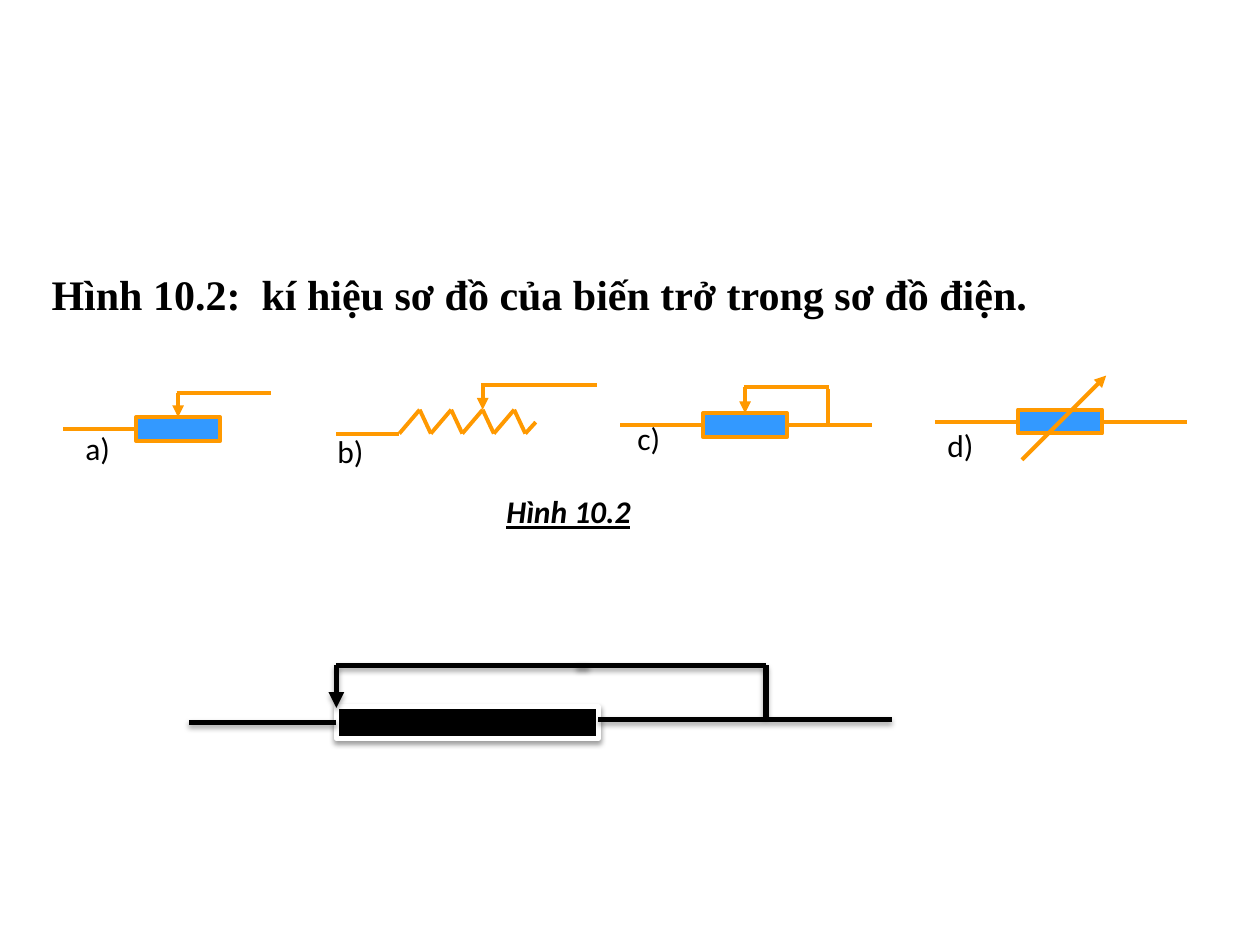
"""Build the slide showing circuit symbols of a variable resistor."""
import itertools

import lxml.etree
import pptx
import pptx.dml.color
import pptx.enum.shapes
import pptx.oxml.ns
import pptx.util

Cm = pptx.util.Cm
Pt = pptx.util.Pt
qn = pptx.oxml.ns.qn

ORANGE, BLUE, BLACK, WHITE = "FF9900", "3399FF", "000000", "FFFFFF"

TITLE = ("Hình 10.2:  kí hiệu sơ đồ của biến trở trong sơ đồ điện.", 0.79, 5.28, 23.67, 1.27)
CAPTION = ("Hình 10.2", 9.96, 9.8, 4.34, 1.02)
LABELS = [("a)", 1.47, 8.53), ("b)", 6.55, 8.59), ("c)", 12.6, 8.33), ("d)", 18.85, 8.46)]
LABEL_SIZE = (1.47, 1.02)

RESISTORS = [(2.74, 8.41), (14.17, 8.33), (20.52, 8.26)]
RESISTOR_SIZE = (1.7, 0.48)
LARGE_RESISTOR = (6.78, 14.25, 5.28, 0.64)

WIRES = [
    (1.27, 8.65, 2.74, 8.65), (3.56, 7.92, 5.46, 7.92),
    (6.78, 8.74, 8.05, 8.74), (9.7, 7.77, 12.04, 7.77),
    (12.5, 8.57, 14.17, 8.57), (15.87, 8.57, 17.58, 8.57),
    (15.0, 7.8, 16.71, 7.8), (16.69, 7.85, 16.69, 8.57),
    (18.85, 8.5, 20.52, 8.5), (22.22, 8.5, 23.93, 8.5),
]
ARROWS = [
    (3.59, 7.92, 3.59, 8.41), (9.73, 7.77, 9.73, 8.26),
    (15.02, 7.8, 15.02, 8.33), (20.6, 9.27, 22.3, 7.57),
]
LARGE_WIRES = [
    (3.81, 14.57, 6.78, 14.57), (12.06, 14.5, 17.98, 14.5),
    (6.78, 13.41, 11.86, 13.41), (15.44, 13.41, 15.44, 14.45),
    (11.63, 13.41, 15.44, 13.41),
]
LARGE_ARROW = (6.78, 13.41, 6.78, 14.27)

ZIGZAG_LEFT, ZIGZAG_TOP, ZIGZAG_BOTTOM = 8.05, 8.26, 8.74
ZIGZAG_STEP, ZIGZAG_RISE, ZIGZAG_TEETH = 0.635, 0.41, 4
ZIGZAG_END = (10.8, 8.51)


def color(value):
    return pptx.dml.color.RGBColor.from_string(value)


def set_effect(shape, opacity=0, distance=0):
    """Give the shape a soft drop shadow, or none when opacity is zero."""
    effects = lxml.etree.SubElement(shape._element.spPr, qn("a:effectLst"))
    if opacity:
        shadow = lxml.etree.SubElement(
            effects, qn("a:outerShdw"), blurRad=str(Pt(3.1)), dist=str(Pt(distance)),
            dir="5400000", rotWithShape="0")
        tint = lxml.etree.SubElement(shadow, qn("a:srgbClr"), val=BLACK)
        lxml.etree.SubElement(tint, qn("a:alpha"), val=str(opacity * 1000))


def add_text(slide, text, left, top, width, height, size=18, font="Calibri", **styles):
    box = slide.shapes.add_textbox(Cm(left), Cm(top), Cm(width), Cm(height))
    box.text_frame.word_wrap = True
    run = box.text_frame.paragraphs[0].add_run()
    run.text = text
    run.font.name, run.font.size = font, Pt(size)
    run.font.color.rgb = color(BLACK)
    for name, value in styles.items():
        setattr(run.font, name, value)


def add_resistor(slide, left, top, width, height, fill, outline, weight, **effect):
    shape = slide.shapes.add_shape(
        pptx.enum.shapes.MSO_SHAPE.RECTANGLE, Cm(left), Cm(top), Cm(width), Cm(height))
    shape.fill.solid()
    shape.fill.fore_color.rgb = color(fill)
    shape.line.color.rgb = color(outline)
    shape.line.width = Pt(weight)
    set_effect(shape, **effect)
    return shape


def join(connect, x, y, resistors):
    """Join a line end to the resistor side whose middle it touches."""
    for shape in resistors:
        middle_x, middle_y = shape.left + shape.width / 2, shape.top + shape.height / 2
        sides = [(middle_x, shape.top), (shape.left, middle_y),
                 (middle_x, shape.top + shape.height), (shape.left + shape.width, middle_y)]
        for site, (side_x, side_y) in enumerate(sides):
            if max(abs(side_x - Cm(x)), abs(side_y - Cm(y))) < Cm(0.02):
                connect(shape, site)


def add_line(slide, ends, resistors, stroke, weight, arrow=False, **effect):
    line = slide.shapes.add_connector(
        pptx.enum.shapes.MSO_CONNECTOR.STRAIGHT, *[Cm(value) for value in ends])
    join(line.begin_connect, *ends[:2], resistors)
    join(line.end_connect, *ends[2:], resistors)
    line.line.color.rgb = color(stroke)
    line.line.width = Pt(weight)
    if arrow:
        lxml.etree.SubElement(line.line._get_or_add_ln(), qn("a:tailEnd"), type="triangle")
    set_effect(line, **effect)


def zigzag():
    points = []
    for tooth in range(ZIGZAG_TEETH):
        left = ZIGZAG_LEFT + tooth * ZIGZAG_STEP
        points += [(left, ZIGZAG_BOTTOM), (left + ZIGZAG_RISE, ZIGZAG_TOP)]
    points += [(ZIGZAG_LEFT + ZIGZAG_TEETH * ZIGZAG_STEP, ZIGZAG_BOTTOM), ZIGZAG_END]
    return [start + end for start, end in itertools.pairwise(points)]


def main():
    presentation = pptx.Presentation()
    presentation.slide_width, presentation.slide_height = Cm(25.4), Cm(19.05)
    slide = presentation.slides.add_slide(presentation.slide_layouts[6])

    add_text(slide, *TITLE, size=24, font="Times New Roman", bold=True)
    resistors = [add_resistor(slide, *place, *RESISTOR_SIZE, BLUE, ORANGE, 2.25)
                 for place in RESISTORS]
    for ends in WIRES + zigzag():
        add_line(slide, ends, resistors, ORANGE, 2.25)
    for ends in ARROWS:
        add_line(slide, ends, resistors, ORANGE, 2.25, arrow=True)
    for label in LABELS:
        add_text(slide, *label, *LABEL_SIZE)
    add_text(slide, *CAPTION, bold=True, italic=True, underline=True)

    large = [add_resistor(slide, *LARGE_RESISTOR, BLACK, WHITE, 3, opacity=38, distance=1.6)]
    for ends in LARGE_WIRES + [LARGE_ARROW]:
        add_line(slide, ends, large, BLACK, 3, arrow=ends == LARGE_ARROW,
                 opacity=35, distance=1.8)

    presentation.save("out.pptx")


if __name__ == "__main__":
    main()
